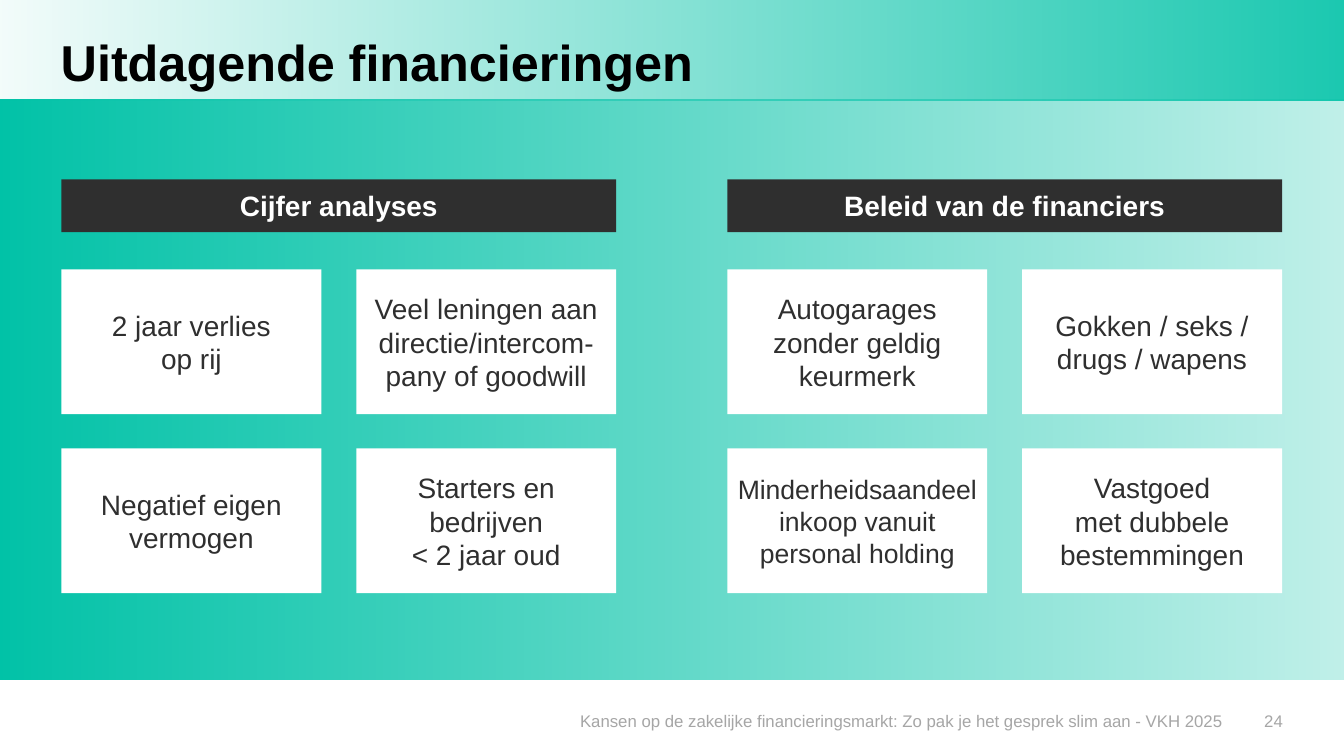
from lxml.etree import SubElement
from pptx import Presentation
from pptx.dml.color import RGBColor
from pptx.enum.shapes import MSO_SHAPE
from pptx.enum.text import MSO_ANCHOR, PP_ALIGN
from pptx.oxml.ns import qn
from pptx.util import Cm, Pt

TITLE = "Uitdagende financieringen"
FOOTER = "Kansen op de zakelijke financieringsmarkt: Zo pak je het gesprek slim aan - VKH 2025"
PAGE_NUMBER = "24"
WIDE_WORD_CARD = "Minderheidsaandeel inkoop vanuit personal holding"
GROUPS = [
    ("Cijfer analyses", [
        "2 jaar verlies\vop rij",
        "Veel leningen aan directie/intercom-pany of goodwill",
        "Negatief eigen vermogen",
        "Starters en\vbedrijven\v< 2 jaar oud",
    ]),
    ("Beleid van de financiers", [
        "Autogarages\vzonder geldig keurmerk",
        "Gokken / seks / drugs / wapens",
        WIDE_WORD_CARD,
        "Vastgoed\vmet dubbele bestemmingen",
    ]),
]

TEAL = RGBColor(0x00, 0xC3, 0xA8)
DARK = RGBColor(0x2F, 0x2F, 0x2F)
WHITE = RGBColor(0xFF, 0xFF, 0xFF)
BLACK = RGBColor(0x00, 0x00, 0x00)
GREY = RGBColor(0xA6, 0xA6, 0xA6)

PAGE_WIDTH, PAGE_HEIGHT = 33.87, 19.05
LEFT, GROUP_PITCH = 1.55, 16.78
HEADING_TOP, HEADING_WIDTH, HEADING_HEIGHT = 4.52, 13.98, 1.33
CARD_TOP, CARD_WIDTH, CARD_HEIGHT = 6.79, 6.55, 3.65
COLUMN_PITCH, ROW_PITCH = 7.43, 4.51

deck = Presentation()
deck.slide_width, deck.slide_height = Cm(PAGE_WIDTH), Cm(PAGE_HEIGHT)
page = deck.slides.add_slide(deck.slide_layouts[6])


def add_rectangle(left, top, width, height):
    box = page.shapes.add_shape(MSO_SHAPE.RECTANGLE, Cm(left), Cm(top), Cm(width), Cm(height))
    box.shadow.inherit = False
    box.line.fill.background()
    return box


def add_gradient_band(top, height, opacities):
    band = add_rectangle(0, top, PAGE_WIDTH, height)
    band.fill.gradient()
    band.fill.gradient_angle = 0
    for stop in band.fill.gradient_stops:
        stop.color.rgb = TEAL
    colors = band.fill._xPr.iter(qn("a:srgbClr"))
    for color, percent in zip(colors, opacities):
        SubElement(color, qn("a:alpha")).set("val", str(percent * 1000))


def write(box, text, size, color, align, bold=False, margin_x=0, margin_y=0):
    frame = box.text_frame
    frame.word_wrap = True
    frame.margin_left = frame.margin_right = Cm(margin_x)
    frame.margin_top = frame.margin_bottom = Cm(margin_y)
    frame.text = text
    para = frame.paragraphs[0]
    para.alignment = align
    for span in para.runs:
        span.font.name = "Arial"
        span.font.size = Pt(size)
        span.font.bold = bold
        span.font.color.rgb = color
    return para


def add_label(left, top, width, height, *style):
    box = page.shapes.add_textbox(Cm(left), Cm(top), Cm(width), Cm(height))
    return write(box, *style)


def add_card(left, top, width, height, fill, *style):
    box = add_rectangle(left, top, width, height)
    box.fill.solid()
    box.fill.fore_color.rgb = fill
    box.text_frame.vertical_anchor = MSO_ANCHOR.MIDDLE
    write(box, *style)


add_gradient_band(0, 2.53, (5, 90))
add_gradient_band(2.5, 14.63, (100, 25))

title = add_label(1.53, 1.02, 26.7, 1.3, TITLE, 36, BLACK, PP_ALIGN.LEFT, True)
title.line_spacing = 0.85
add_label(12.34, 17.91, 18.49, 0.51, FOOTER, 12, GREY, PP_ALIGN.RIGHT)
add_label(31.34, 17.91, 0.99, 0.51, PAGE_NUMBER, 12, GREY, PP_ALIGN.RIGHT)

for group, (heading, cards) in enumerate(GROUPS):
    group_left = LEFT + group * GROUP_PITCH
    add_card(group_left, HEADING_TOP, HEADING_WIDTH, HEADING_HEIGHT, DARK,
             heading, 20, WHITE, PP_ALIGN.CENTER, True, 0.23, 0.23)
    for index, text in enumerate(cards):
        row, column = divmod(index, 2)
        size, margin_x = (19, 0.1) if text == WIDE_WORD_CARD else (20, 0.25)
        add_card(group_left + column * COLUMN_PITCH, CARD_TOP + row * ROW_PITCH,
                 CARD_WIDTH, CARD_HEIGHT, WHITE,
                 text, size, DARK, PP_ALIGN.CENTER, False, margin_x, 0.13)

deck.save("out.pptx")
